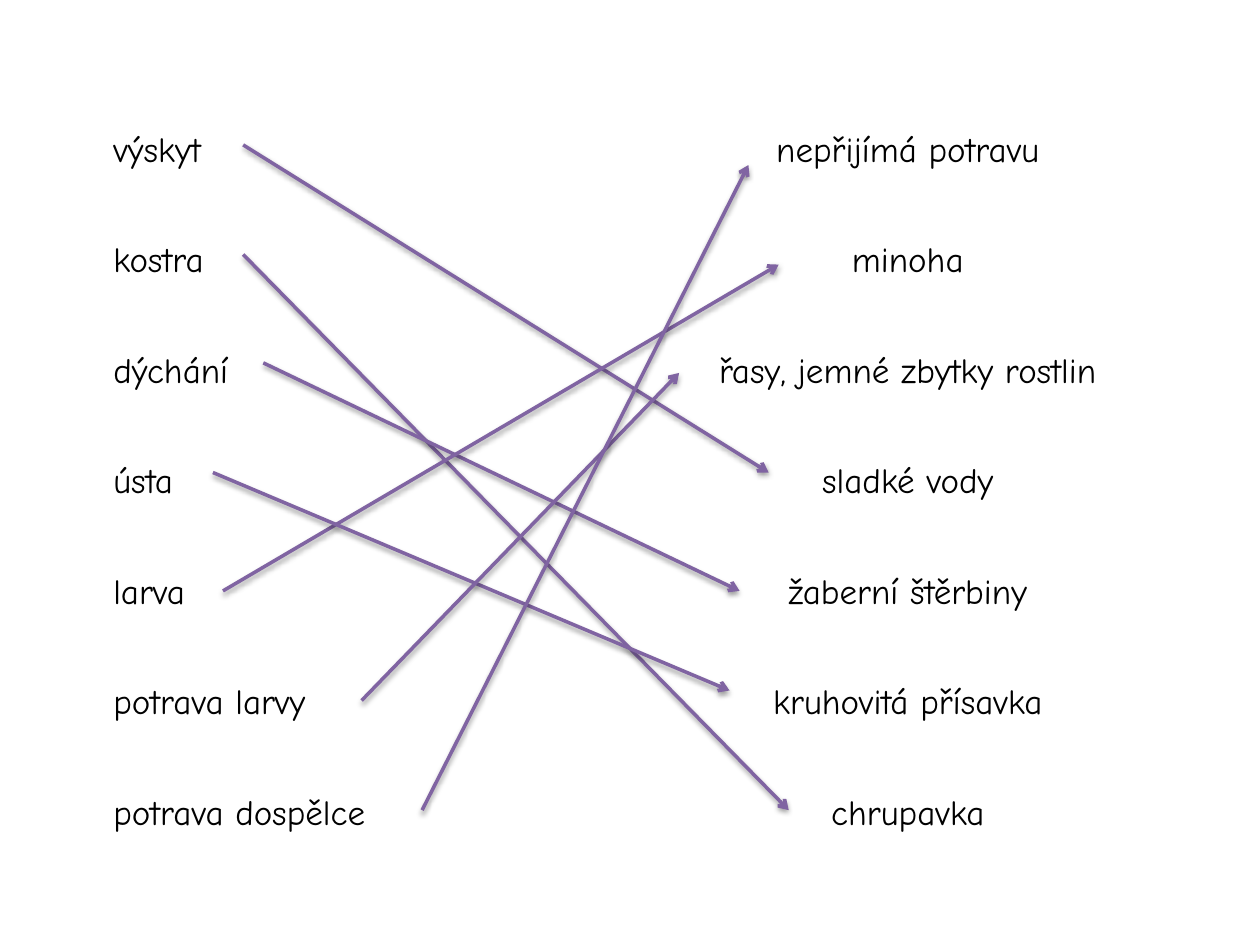
from typing import NamedTuple

from lxml import etree
from pptx import Presentation
from pptx.dml.color import RGBColor
from pptx.enum import shapes, text
from pptx.oxml import ns
from pptx.util import Inches, Pt

BLACK = RGBColor(0x00, 0x00, 0x00)
PURPLE = RGBColor(0x80, 0x64, 0xA2)
FONT = "Comic Neue"


class Row(NamedTuple):
    term: str
    answer: str


class Match(NamedTuple):
    """An arrow from a term to its answer, in inches."""
    x1: float
    y1: float
    x2: float
    y2: float


ROWS = [
    Row("výskyt", "nepřijímá potravu"),
    Row("kostra", "minoha"),
    Row("dýchání", "řasy, jemné zbytky rostlin"),
    Row("ústa", "sladké vody"),
    Row("larva", "žaberní štěrbiny"),
    Row("potrava larvy", "kruhovitá přísavka"),
    Row("potrava dospělce", "chrupavka"),
]
MATCHES = [
    Match(1.93, 1.15, 6.1, 3.75),
    Match(1.93, 2.02, 6.26, 6.43),
    Match(2.09, 2.88, 5.87, 4.69),
    Match(1.77, 4.69, 6.18, 2.1),
    Match(1.69, 3.75, 5.79, 5.48),
    Match(2.87, 5.56, 5.39, 2.96),
    Match(3.35, 6.43, 5.94, 1.31),
]


def fill_cell(cell, wording: str, align: text.PP_ALIGN) -> None:
    cell.fill.background()
    cell.vertical_anchor = text.MSO_ANCHOR.MIDDLE
    cell.margin_left = cell.margin_right = Inches(0.07)
    cell.margin_top = cell.margin_bottom = 0
    para = cell.text_frame.paragraphs[0]
    para.text = wording
    para.alignment = align
    para.line_spacing = 1.5
    font = para.runs[0].font
    font.name = FONT
    font.size = Pt(20)
    font.color.rgb = BLACK


def add_terms(page, rows: list[Row]) -> None:
    table = page.shapes.add_table(len(rows), 2, Inches(0.83), Inches(0.68),
                                  Inches(8.5), Inches(6.14)).table
    table.first_row = table.horz_banding = False
    for index, row in enumerate(rows):
        fill_cell(table.cell(index, 0), row.term, text.PP_ALIGN.LEFT)
        fill_cell(table.cell(index, 1), row.answer, text.PP_ALIGN.CENTER)


def add_shadow(connector) -> None:
    effects = etree.SubElement(connector._element.spPr, ns.qn("a:effectLst"))
    shadow = etree.SubElement(effects, ns.qn("a:outerShdw"), blurRad=str(Pt(3.1)),
                              dist=str(Pt(1.6)), dir="5400000", rotWithShape="0")
    color = etree.SubElement(shadow, ns.qn("a:srgbClr"), val=str(BLACK))
    etree.SubElement(color, ns.qn("a:alpha"), val="38000")


def add_arrow(page, match: Match) -> None:
    arrow = page.shapes.add_connector(shapes.MSO_CONNECTOR.STRAIGHT,
                                      *(Inches(length) for length in match))
    arrow.line.color.rgb = PURPLE
    arrow.line.width = Pt(2)
    etree.SubElement(arrow.line._get_or_add_ln(), ns.qn("a:tailEnd"), type="arrow")
    add_shadow(arrow)


def main() -> None:
    deck = Presentation()
    deck.slide_width, deck.slide_height = Inches(10), Inches(7.5)
    page = deck.slides.add_slide(deck.slide_layouts[6])
    add_terms(page, ROWS)
    for match in MATCHES:
        add_arrow(page, match)
    deck.save("out.pptx")


if __name__ == "__main__":
    main()
